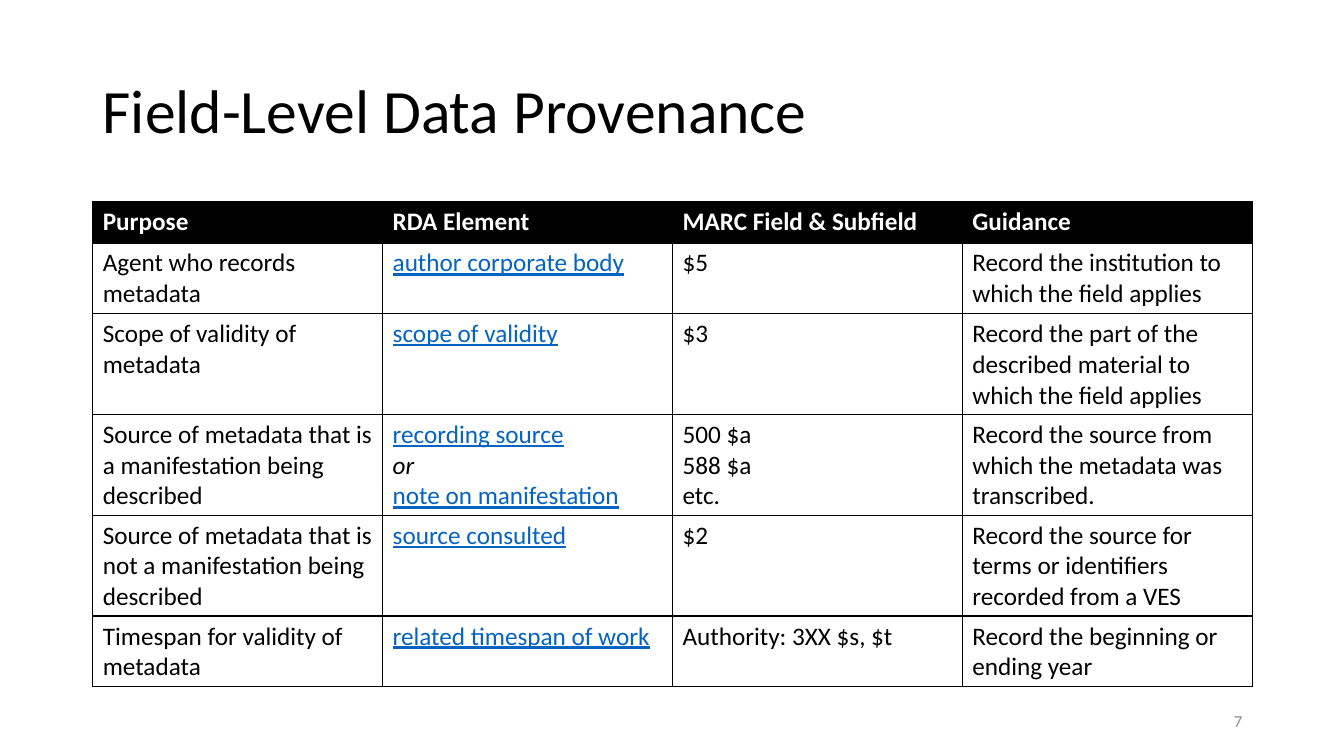
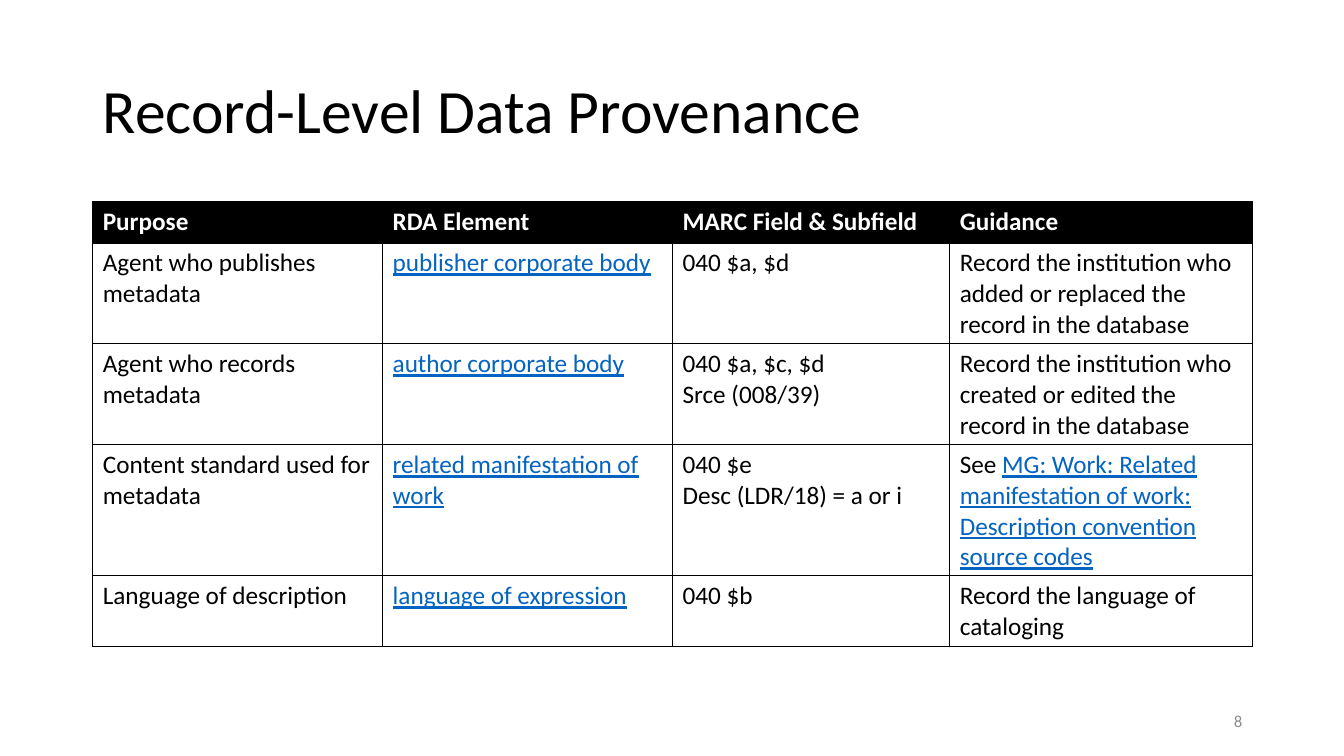
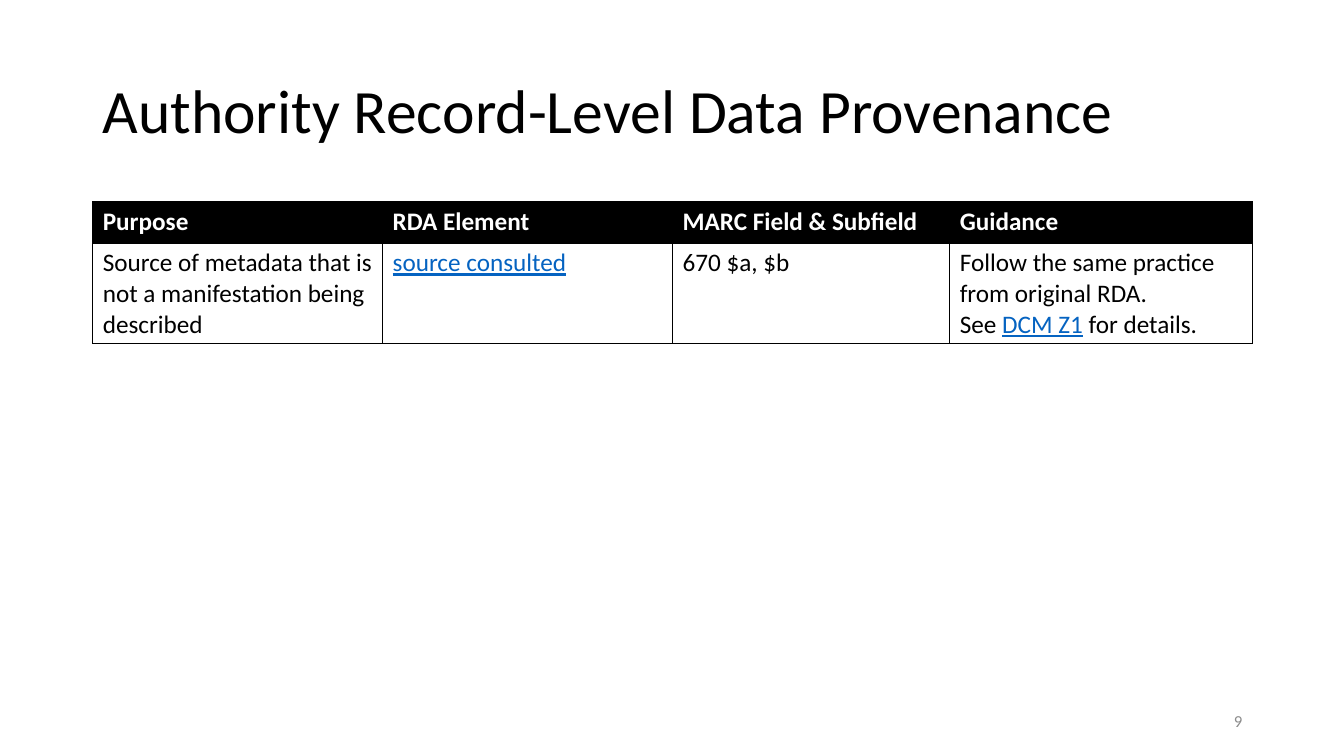
import pptx
import pptx.dml.color
import pptx.enum.text
import pptx.oxml
import pptx.oxml.ns
import pptx.util

FONT = "Calibri"
BLACK, WHITE, GREY, LINK = "000000", "FFFFFF", "8C8C8C", "0563C1"
ALIGN = pptx.enum.text.PP_ALIGN
MIDDLE = pptx.enum.text.MSO_ANCHOR.MIDDLE
Inches = pptx.util.Inches

# Shared grid, in inches
LEFT, WIDTH = 0.92, 11.5
TITLE_AREA = (LEFT, 0.4, WIDTH, 1.45)
NUMBER_AREA = (LEFT + WIDTH - 3, 6.95, 3, 0.4)
TABLE_TOP, ROW_HEIGHT = 2, 0.41
EVEN_COLUMNS = [WIDTH / 4] * 4
WIDE_GUIDANCE = [WIDTH / 4, WIDTH / 4, 2.75, 3]

HEADER = ["Purpose", "RDA Element", "MARC Field & Subfield", "Guidance"]


def color(value):
    return pptx.dml.color.RGBColor.from_string(value)


def write(frame, text, size=18, ink=BLACK, bold=False, align=ALIGN.LEFT, spacing=1.0):
    """Newlines part paragraphs, | parts spans; _ opens a link span, * an italic one."""
    frame.word_wrap = True
    for index, line in enumerate(text.split("\n")):
        para = frame.add_paragraph() if index else frame.paragraphs[0]
        para.alignment, para.line_spacing = align, spacing
        for piece in line.split("|"):
            is_link, is_italic = piece.startswith("_"), piece.startswith("*")
            span = para.add_run()
            span.text = piece.lstrip("_*")
            span.font.name, span.font.size = FONT, pptx.util.Pt(size)
            span.font.bold, span.font.italic = bold, is_italic
            span.font.underline = is_link
            span.font.color.rgb = color(LINK if is_link else ink)


# Content: title, column widths, table rows
pages = [
    ("Field-Level Data Provenance", EVEN_COLUMNS, [
        ["Agent who records metadata", "_author corporate body", "$5",
         "Record the institution to which the field applies"],
        ["Scope of validity of metadata", "_scope of validity", "$3",
         "Record the part of the described material to which the field applies"],
        ["Source of metadata that is a manifestation being described",
         "_recording source\n*or\n_note on manifestation", "500 $a\n588 $a\netc.",
         "Record the source from which the metadata was transcribed."],
        ["Source of metadata that is not a manifestation being described",
         "_source consulted", "$2",
         "Record the source for terms or identifiers recorded from a VES"],
        ["Timespan for validity of metadata", "_related timespan of work",
         "Authority: 3XX $s, $t", "Record the beginning or ending year"],
    ]),
    ("Record-Level Data Provenance", WIDE_GUIDANCE, [
        ["Agent who publishes metadata", "_publisher corporate body", "040 $a, $d",
         "Record the institution who added or replaced the record in the database"],
        ["Agent who records metadata", "_author corporate body",
         "040 $a, $c, $d\nSrce (008/39)",
         "Record the institution who created or edited the record in the database"],
        ["Content standard used for metadata", "_related manifestation of work",
         "040 $e\nDesc (LDR/18) = a or i",
         "See |_MG: Work: Related manifestation of work: "
         "Description convention source codes"],
        ["Language of description", "_language of expression", "040 $b",
         "Record the language of cataloging"],
    ]),
    ("Authority Record-Level Data Provenance", WIDE_GUIDANCE, [
        ["Source of metadata that is not a manifestation being described",
         "_source consulted", "670 $a, $b",
         "Follow the same practice from original RDA.\nSee |_DCM Z1| for details."],
    ]),
]

deck = pptx.Presentation()
deck.slide_width, deck.slide_height = Inches(13.33), Inches(7.5)

for number, (title, columns, body) in enumerate(pages, start=7):
    page = deck.slides.add_slide(deck.slide_layouts[6])

    # Title and page number
    for area, text, style in [
        (TITLE_AREA, title, {"size": 44, "spacing": 0.9}),
        (NUMBER_AREA, str(number), {"size": 12, "ink": GREY, "align": ALIGN.RIGHT}),
    ]:
        box = page.shapes.add_textbox(*map(Inches, area))
        box.text_frame.vertical_anchor = MIDDLE
        write(box.text_frame, text, **style)

    # Table: rows grow to fit their text
    rows = [HEADER] + body
    table = page.shapes.add_table(
        len(rows), len(columns), Inches(LEFT), Inches(TABLE_TOP),
        Inches(WIDTH), Inches(ROW_HEIGHT * len(rows))).table
    table.first_row = table.horz_banding = False
    for column, width in zip(table.columns, columns):
        column.width = Inches(width)

    for row_index, row in enumerate(rows):
        is_header = row_index == 0
        for column_index, text in enumerate(row):
            cell = table.cell(row_index, column_index)
            properties = cell._tc.get_or_add_tcPr()
            for side in ("lnL", "lnR", "lnT", "lnB"):
                properties.append(pptx.oxml.parse_xml(
                    f'<a:{side} {pptx.oxml.ns.nsdecls("a")} w="12700"><a:solidFill>'
                    f'<a:srgbClr val="{BLACK}"/></a:solidFill></a:{side}>'))
            if is_header:
                cell.fill.solid()
                cell.fill.fore_color.rgb = color(BLACK)
            else:
                cell.fill.background()
            write(cell.text_frame, text, bold=is_header,
                  ink=WHITE if is_header else BLACK)

deck.save("out.pptx")
